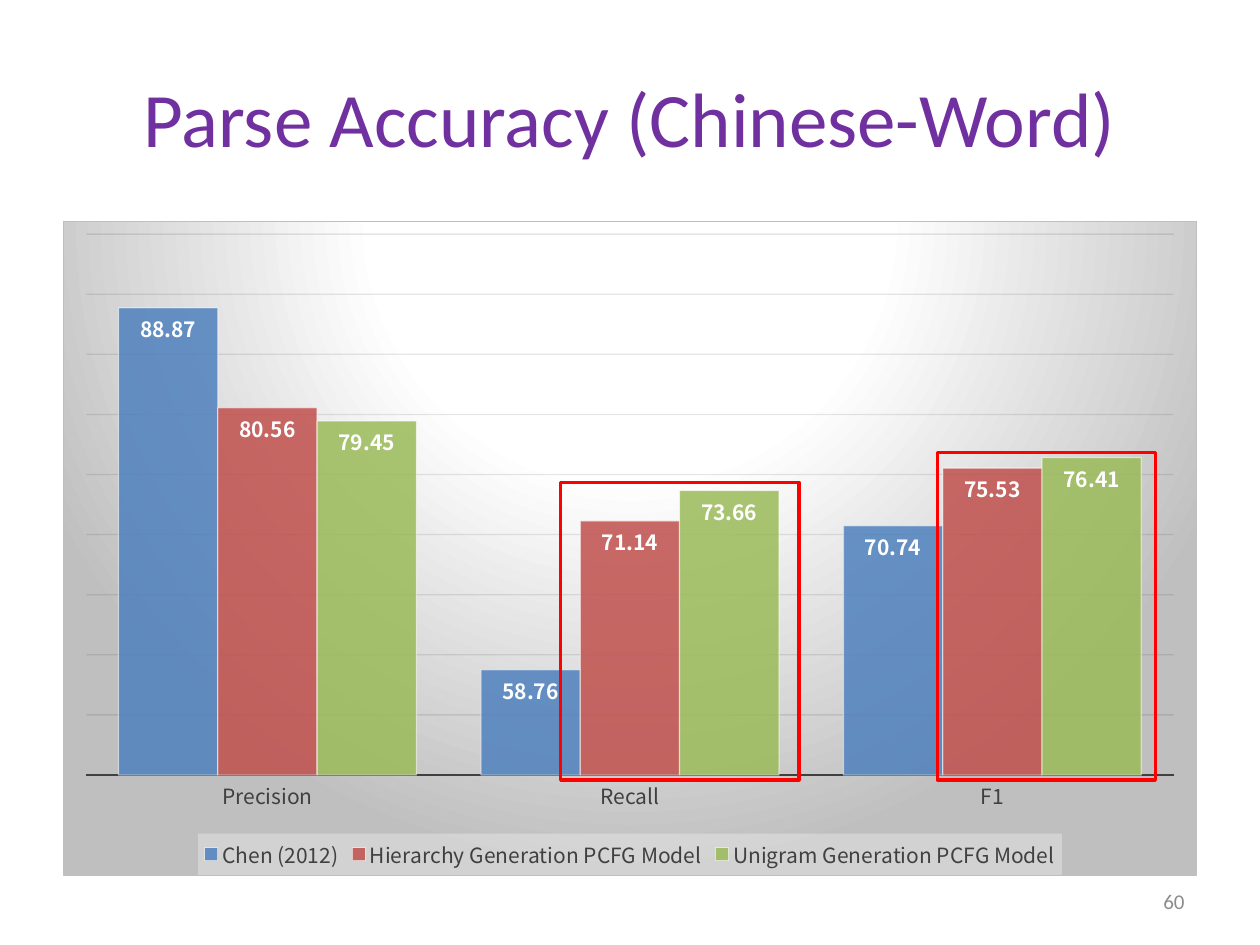
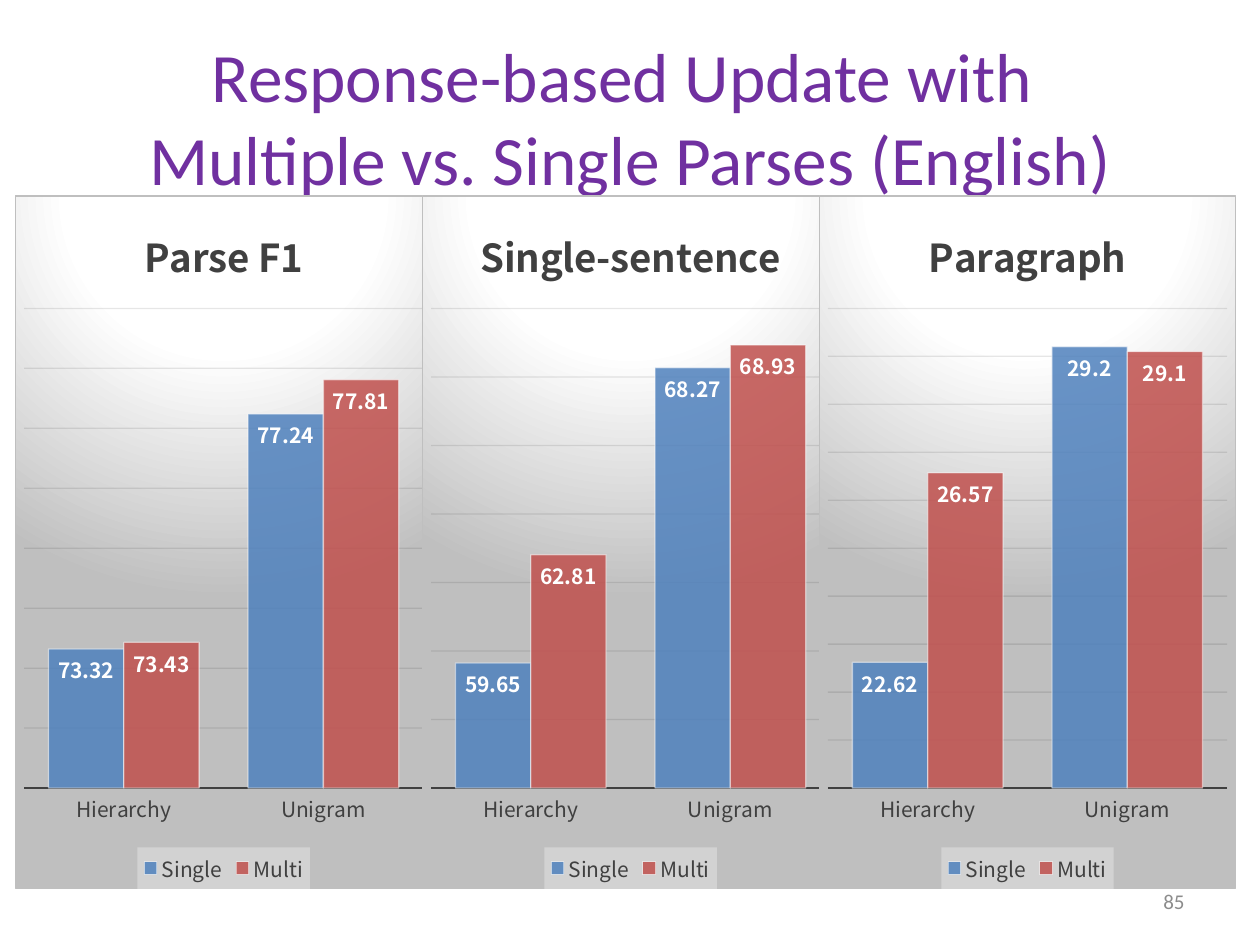
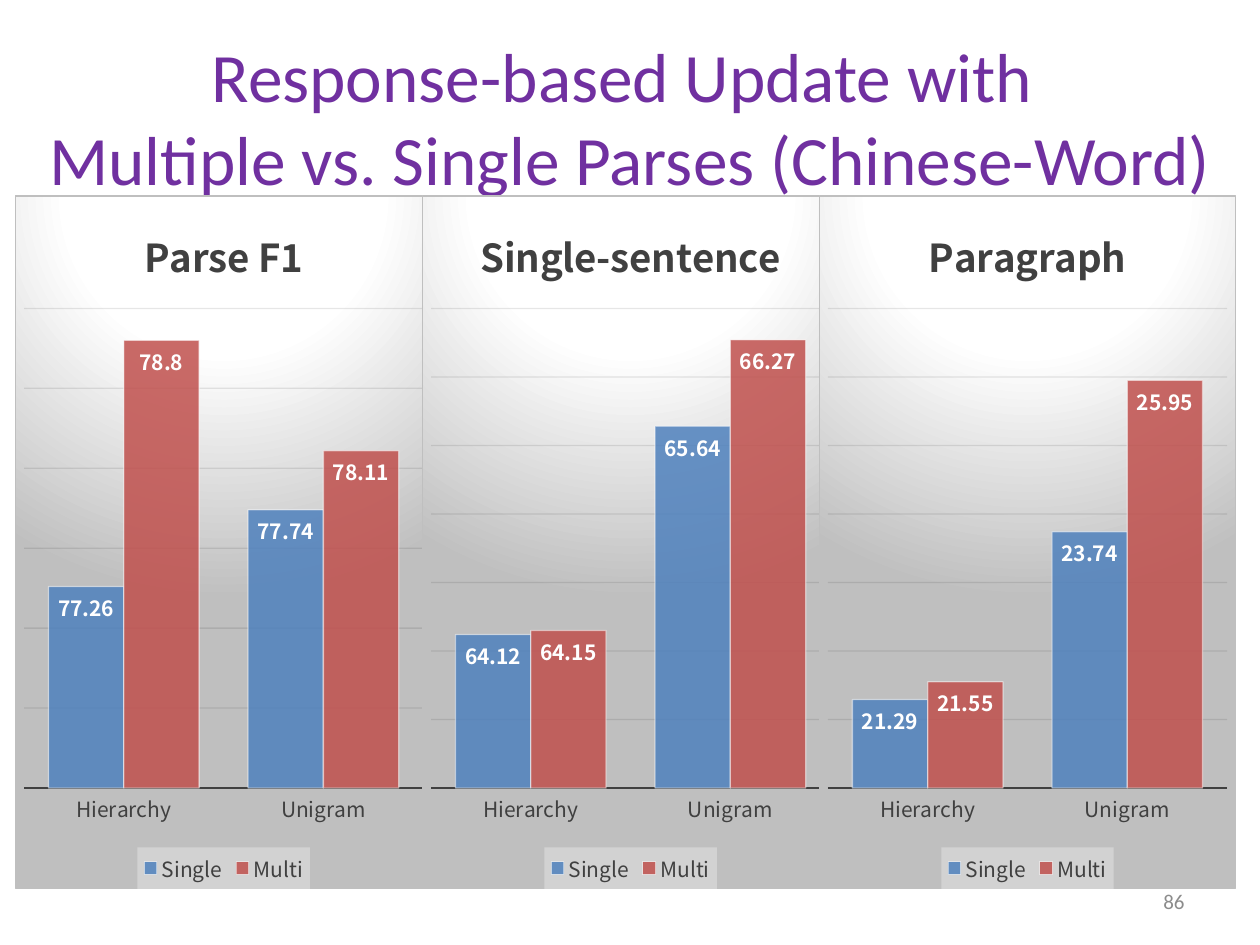
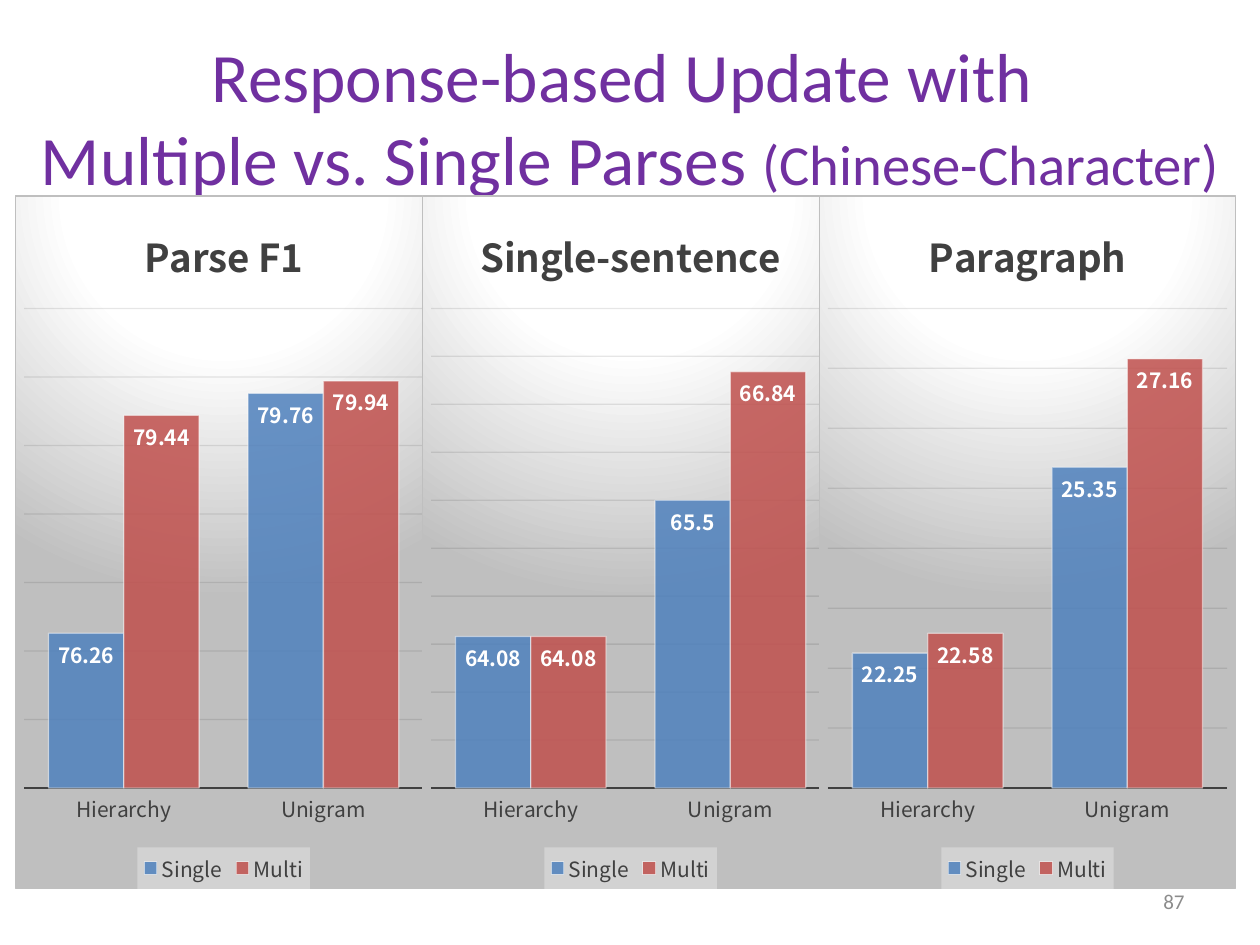
import pptx
import pptx.util
import pptx.chart.data
import pptx.dml.color
import pptx.enum.chart
import pptx.enum.shapes
import pptx.enum.text
import pptx.oxml
import pptx.oxml.ns

Inches, Pt = pptx.util.Inches, pptx.util.Pt
qn = pptx.oxml.ns.qn

HEAD_FONT, CHART_FONT = "Calibri", "Noto Sans CJK KR"
PURPLE, GREY, DARK, RED, WHITE = "7030A0", "8C8C8C", "404040", "FF0000", "FFFFFF"
GRID = "0D0D0D"
BARS = ["4F81BD", "C0504D", "9BBB59"]

# Titles are lines of (text, size) runs.
WORD = {
    "title": [[("Parse Accuracy (Chinese-Word)", 44)]],
    "box": (0.5, 9),
    "number": 60,
    "cats": ["Precision", "Recall", "F1"],
    "series": [
        ("Chen (2012)", [88.87, 58.76, 70.74]),
        ("Hierarchy Generation PCFG Model", [80.56, 71.14, 75.53]),
        ("Unigram Generation PCFG Model", [79.45, 73.66, 76.41]),
    ],
    "frames": [(4.45, 3.83, 1.89, 2.36), (7.44, 3.59, 1.73, 2.6)],
}

TOP_LINE = [("Response-based Update with ", 39.6)]
MULTI = "Multiple vs. Single Parses "
MODELS = ["Hierarchy", "Unigram"]
PANELS = [("Parse F1", 0.12), ("Single-sentence", 3.35), ("Paragraph", 6.5)]

# Each panel: Single values, Multi values, lowest axis value (None is automatic).
UPDATES = [
    {
        "title": [TOP_LINE, [(MULTI + "(English)", 39.6)]],
        "box": (0.5, 9),
        "number": 85,
        "panels": [
            ([73.32, 77.24], [73.43, 77.81], None),
            ([59.65, 68.27], [62.81, 68.93], 56),
            ([22.62, 29.2], [26.57, 29.1], 20),
        ],
    },
    {
        "title": [TOP_LINE, [(MULTI + "(Chinese-Word)", 39.6)]],
        "box": (0.12, 9.76),
        "number": 86,
        "panels": [
            ([77.26, 77.74], [78.8, 78.11], None),
            ([64.12, 65.64], [64.15, 66.27], None),
            ([21.29, 23.74], [21.55, 25.95], 20),
        ],
    },
    {
        "title": [TOP_LINE, [(MULTI, 39.6), ("(Chinese-Character)", 32.4)]],
        "box": (0, 10),
        "number": 87,
        "panels": [
            ([76.26, 79.76], [79.44, 79.94], None),
            ([64.08, 65.5], [64.08, 66.84], None),
            ([22.25, 25.35], [22.58, 27.16], 20),
        ],
    },
]

NS = pptx.oxml.ns.nsdecls("c", "a")
CHART_BACK = f"""<c:spPr {NS}>
  <a:gradFill><a:gsLst>
    <a:gs pos="0"><a:srgbClr val="FFFFFF"/></a:gs>
    <a:gs pos="39000"><a:srgbClr val="FFFFFF"/></a:gs>
    <a:gs pos="100000"><a:srgbClr val="BFBFBF"/></a:gs>
  </a:gsLst><a:path path="circle">
    <a:fillToRect l="50000" t="-80000" r="50000" b="180000"/>
  </a:path></a:gradFill>
  <a:ln w="9525"><a:solidFill><a:srgbClr val="BFBFBF"/></a:solidFill></a:ln>
</c:spPr>"""
LEGEND_BACK = f"""<c:spPr {NS}><a:solidFill>
  <a:srgbClr val="F2F2F2"><a:alpha val="39000"/></a:srgbClr>
</a:solidFill></c:spPr>"""


def rgb(code):
    return pptx.dml.color.RGBColor.from_string(code)


def style(font, size, color, bold=False, name=CHART_FONT):
    font.size, font.bold, font.name = Pt(size), bold, name
    font.color.rgb = rgb(color)


def stroke(line, color, width):
    line.color.rgb = rgb(color)
    line.width = Pt(width)


def fade(node, *shares):
    """Give the colours inside node, in order, these opacities in percent."""
    for color, share in zip(list(node.iter(qn("a:srgbClr"))), shares):
        alpha = color.makeelement(qn("a:alpha"), {"val": str(share * 1000)})
        color.append(alpha)


def add_page(deck, page):
    slide = deck.slides.add_slide(deck.slide_layouts[5])
    title = slide.shapes.title
    left, width = page["box"]
    title.left, title.top = Inches(left), Inches(0.3)
    title.width, title.height = Inches(width), Inches(1.25)
    frame = title.text_frame
    frame.vertical_anchor = pptx.enum.text.MSO_ANCHOR.MIDDLE
    para = frame.paragraphs[0]
    para.alignment = pptx.enum.text.PP_ALIGN.CENTER
    for i, line in enumerate(page["title"]):
        if i:
            para.add_line_break()
        for text, size in line:
            run = para.add_run()
            run.text = text
            style(run.font, size, PURPLE, name=HEAD_FONT)

    box = slide.shapes.add_textbox(Inches(7.17), Inches(6.95), Inches(2.33), Inches(0.4))
    frame = box.text_frame
    frame.word_wrap = True
    frame.vertical_anchor = pptx.enum.text.MSO_ANCHOR.MIDDLE
    para = frame.paragraphs[0]
    para.alignment = pptx.enum.text.PP_ALIGN.RIGHT
    run = para.add_run()
    run.text = str(page["number"])
    style(run.font, 12, GREY, name=HEAD_FONT)
    return slide


def add_bars(slide, place, cats, series, title=None, low=None, high=None):
    data = pptx.chart.data.CategoryChartData()
    data.categories = cats
    for name, values in series:
        data.add_series(name, values)
    kind = pptx.enum.chart.XL_CHART_TYPE.COLUMN_CLUSTERED
    chart = slide.shapes.add_chart(kind, *map(Inches, place), data).chart
    style(chart.font, 10, "000000")
    root = chart.element
    root.find(qn("c:chart")).addnext(pptx.oxml.parse_xml(CHART_BACK))

    chart.has_title = title is not None
    if title:
        run = chart.chart_title.text_frame.paragraphs[0].add_run()
        run.text = title
        style(run.font, 22, DARK, bold=True)
        chart.chart_title.include_in_layout = False

    none = pptx.enum.chart.XL_TICK_MARK.NONE
    base = chart.category_axis
    base.major_tick_mark = base.minor_tick_mark = none
    style(base.tick_labels.font, 12, DARK)
    stroke(base.format.line, DARK, 1.5)
    scale = chart.value_axis
    scale.visible = False
    scale.minimum_scale, scale.maximum_scale = low, high
    stroke(scale.major_gridlines.format.line, GRID, 0.75)
    fade(next(root.iter(qn("c:majorGridlines"))), 10)

    chart.has_legend = True
    legend = chart.legend
    legend.position = pptx.enum.chart.XL_LEGEND_POSITION.BOTTOM
    legend.include_in_layout = False
    style(legend.font, 12, DARK)
    overlay = next(root.iter(qn("c:legend"))).find(qn("c:overlay"))
    overlay.addnext(pptx.oxml.parse_xml(LEGEND_BACK))

    plot = chart.plots[0]
    plot.gap_width, plot.overlap, plot.vary_by_categories = 65, 0, False
    nodes = root.iter(qn("c:ser"))
    for bars, node, color in zip(plot.series, list(nodes), BARS):
        bars.invert_if_negative = False
        bars.format.fill.solid()
        bars.format.fill.fore_color.rgb = rgb(color)
        stroke(bars.format.line, WHITE, 0.75)
        fade(node.find(qn("c:spPr")), 85, 50)
        labels = bars.data_labels
        labels.show_value = True
        labels.position = pptx.enum.chart.XL_LABEL_POSITION.INSIDE_END
        style(labels.font, 12, WHITE, bold=True)


def add_frame(slide, place):
    kind = pptx.enum.shapes.MSO_SHAPE.RECTANGLE
    frame = slide.shapes.add_shape(kind, *map(Inches, place))
    frame.shadow.inherit = False
    frame.fill.background()
    stroke(frame.line, RED, 2)


def main():
    deck = pptx.Presentation()
    deck.slide_width, deck.slide_height = Inches(10), Inches(7.5)

    slide = add_page(deck, WORD)
    add_bars(slide, (0.5, 1.75, 9, 5.2), WORD["cats"], WORD["series"], low=50, high=95)
    for place in WORD["frames"]:
        add_frame(slide, place)

    for page in UPDATES:
        slide = add_page(deck, page)
        for (title, left), (single, multi, low) in zip(PANELS, page["panels"]):
            series = [("Single", single), ("Multi", multi)]
            add_bars(slide, (left, 1.55, 3.31, 5.51), MODELS, series, title, low)

    deck.save("out.pptx")


if __name__ == "__main__":
    main()
